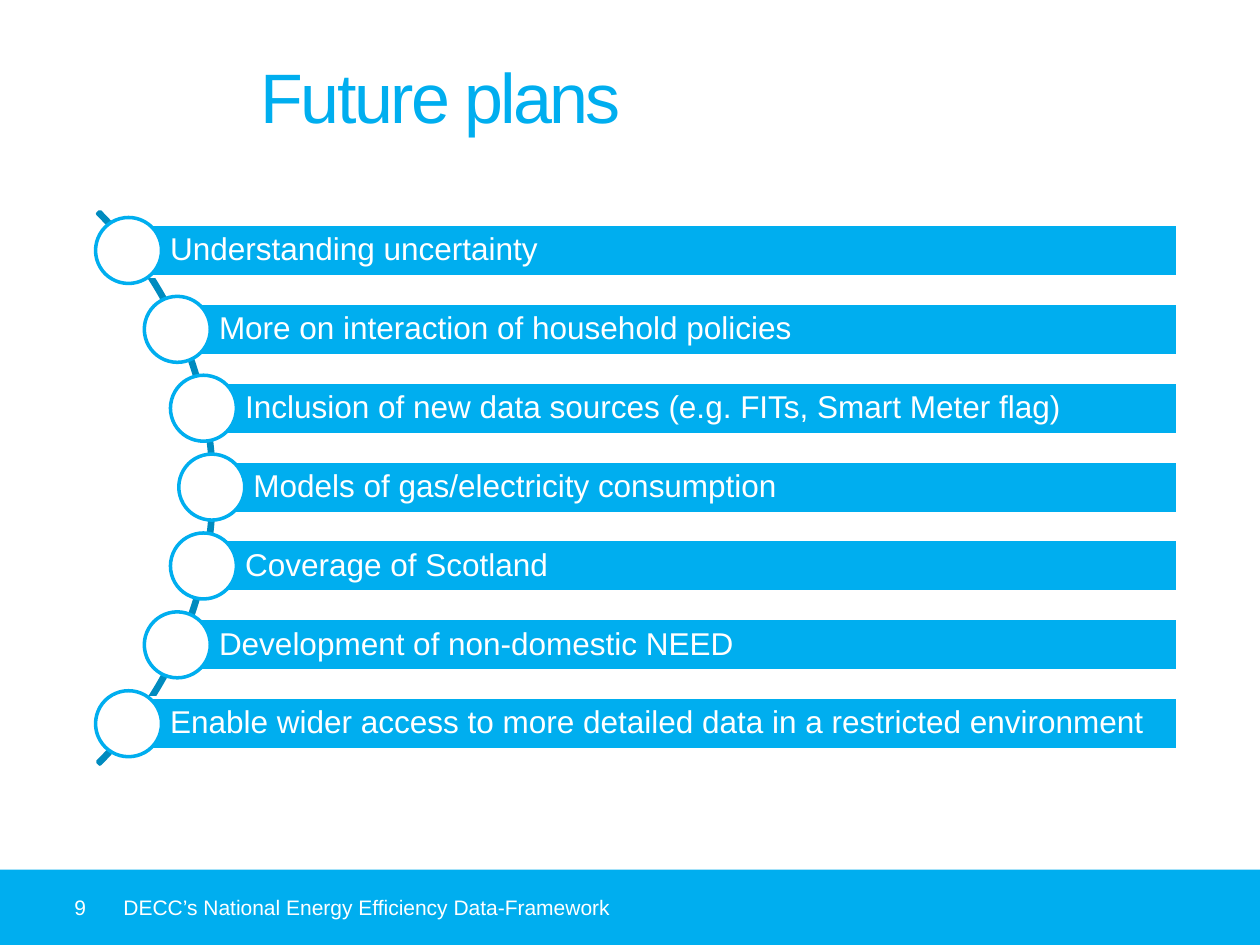
from dataclasses import dataclass
from math import sqrt

from pptx import Presentation
from pptx.dml.color import RGBColor
from pptx.enum.shapes import MSO_SHAPE as Preset
from pptx.enum.text import MSO_ANCHOR as Anchor, PP_ALIGN as Align
from pptx.util import Cm, Pt

BLUE, DARK_BLUE, WHITE = "00AEEF", "008BBF", "FFFFFF"

# Plan list geometry, in cm: circles sit on an arc, bars share a right edge.
ARC_RADIUS = 7.62
ARC_RIGHT = 4.27
MIDDLE_Y = 9.82
ROW_PITCH = 1.59
BAR_RIGHT = 23.74
BAR_HEIGHT = 1.06
CIRCLE_SIZE = 1.33

PLANS = [
    "Understanding uncertainty",
    "More on interaction of household policies",
    "Inclusion of new data sources (e.g. FITs, Smart Meter flag)",
    "Models of gas/electricity consumption",
    "Coverage of Scotland",
    "Development of non-domestic NEED",
    "Enable wider access to more detailed data in a restricted environment",
]


@dataclass
class Frame:
    """A rectangle in centimetres."""
    left: float
    top: float
    width: float
    height: float

    def lengths(self):
        return Cm(self.left), Cm(self.top), Cm(self.width), Cm(self.height)


def color(code: str) -> RGBColor:
    return RGBColor.from_string(code)


def add_preset(page, preset, frame: Frame, fill: str = "", line: str = ""):
    """Add a flat shape; an empty colour means no fill or no line."""
    shape = page.shapes.add_shape(preset, *frame.lengths())
    shape.shadow.inherit = False
    if fill:
        shape.fill.solid()
        shape.fill.fore_color.rgb = color(fill)
    else:
        shape.fill.background()
    if line:
        shape.line.color.rgb = color(line)
        shape.line.width = Pt(2)
    else:
        shape.line.fill.background()
    return shape


def write(shape, text: str, size: float, ink: str = WHITE,
          insets=(0, 0, 0, 0), anchor=Anchor.MIDDLE):
    """Fill a shape with one left-aligned paragraph; insets in cm."""
    box = shape.text_frame
    box.word_wrap = True
    box.vertical_anchor = anchor
    box.margin_left, box.margin_top, box.margin_right, box.margin_bottom = map(Cm, insets)
    para = box.paragraphs[0]
    para.text = text
    para.alignment = Align.LEFT
    para.font.name = "Arial"
    para.font.size = Pt(size)
    para.font.color.rgb = color(ink)
    return para


def add_title(page, text: str):
    box = page.shapes.add_textbox(*Frame(5.26, 0.97, 19, 1.8).lengths())
    para = write(box, text, 40, BLUE, anchor=Anchor.BOTTOM)
    para.runs[0]._r.get_or_add_rPr().set("spc", "-150")


def add_footer(page, number: str, text: str):
    band = add_preset(page, Preset.RECTANGLE, Frame(0, 17.53, 25.4, 1.52), BLUE)
    write(band, number, 12, insets=(1.5, 0, 0.25, 0))
    box = page.shapes.add_textbox(*Frame(2.49, 17.53, 21.41, 1.52).lengths())
    write(box, text, 12)


def add_arc(page):
    arc = add_preset(page, Preset.BLOCK_ARC, Frame(-11.43, 1.96, 15.75, 15.75), line=DARK_BLUE)
    for index, value in enumerate((189, 27, 0.004)):
        arc.adjustments[index] = value


def add_plan(page, text: str, steps_from_middle: float):
    """Draw a bar with a circle on its left end, both centred on the arc."""
    offset = steps_from_middle * ROW_PITCH
    x = ARC_RIGHT - ARC_RADIUS + sqrt(ARC_RADIUS ** 2 - offset ** 2)
    y = MIDDLE_Y + offset
    bar = add_preset(page, Preset.RECTANGLE,
                     Frame(x, y - BAR_HEIGHT / 2, BAR_RIGHT - x, BAR_HEIGHT), BLUE, WHITE)
    para = write(bar, text, 18, insets=(0.84, 0.13, 0.13, 0.13))
    para.line_spacing = 0.9
    add_preset(page, Preset.OVAL,
               Frame(x - CIRCLE_SIZE / 2, y - CIRCLE_SIZE / 2, CIRCLE_SIZE, CIRCLE_SIZE),
               WHITE, BLUE)


def main():
    deck = Presentation()
    deck.slide_width, deck.slide_height = Cm(25.4), Cm(19.05)
    page = deck.slides.add_slide(deck.slide_layouts[6])
    add_title(page, "Future plans")
    add_footer(page, "9", "DECC’s National Energy Efficiency Data-Framework")
    add_arc(page)
    for index, plan in enumerate(PLANS):
        add_plan(page, plan, index - (len(PLANS) - 1) / 2)
    deck.save("out.pptx")


if __name__ == "__main__":
    main()
